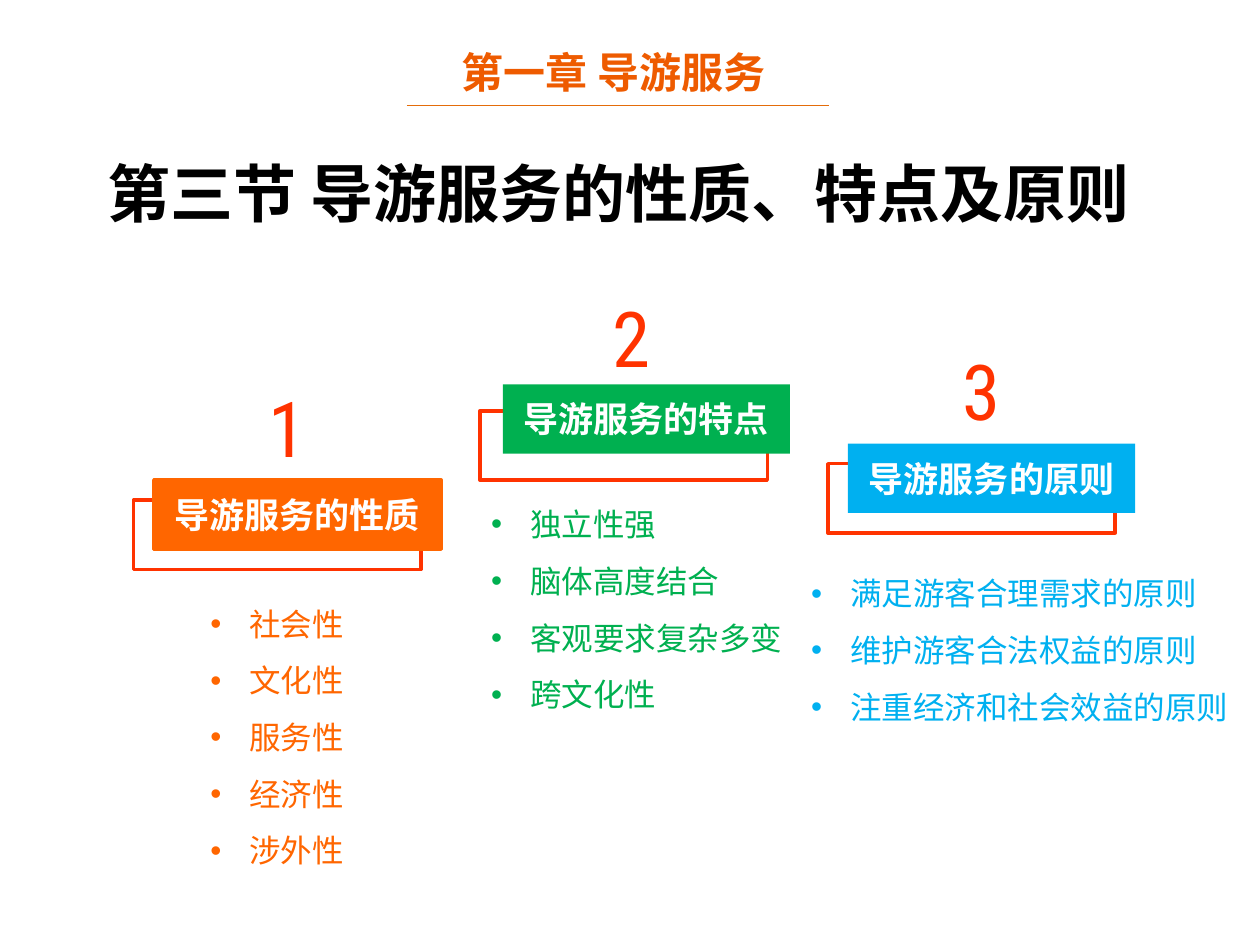
from lxml import etree
from pptx import Presentation
from pptx.dml.color import RGBColor
from pptx.enum.shapes import MSO_CONNECTOR, MSO_SHAPE
from pptx.enum.text import MSO_ANCHOR, MSO_AUTO_SIZE, PP_ALIGN
from pptx.oxml.ns import qn
from pptx.util import Inches, Pt

COLORS = {
    "rule": "E46C0A", "chapter": "EE5B00", "title": "000000", "accent": "FF3300",
    "white": "FFFFFF", "orange": "FF6600", "green": "00B050", "blue": "00B0F0",
}
BODY, CJK, DIGITS = "Calibri", "Noto Sans CJK SC", "Roboto Condensed"
LABEL_SIZE = (2.28, 0.55)
INDENT = 0.31

CHAPTER = "第一章 导游服务"
TITLE = "第三节 导游服务的性质、特点及原则"
TOPICS = [
    {"number": "1", "number_at": (2.03, 2.97), "label": "导游服务的性质", "color": "orange",
     "label_at": (1.22, 3.81), "frame_at": (1.06, 3.97), "outlined": True,
     "list_at": (1.06, 4.6, 2.28, 2.37), "align": PP_ALIGN.CENTER,
     "items": ["社会性", "文化性", "服务性", "经济性", "涉外性"]},
    {"number": "2", "number_at": (4.76, 2.26), "label": "导游服务的特点", "color": "green",
     "label_at": (3.99, 3.05), "frame_at": (3.81, 3.26), "outlined": False,
     "list_at": (3.8, 3.81, 2.77, 1.92), "align": PP_ALIGN.LEFT,
     "items": ["独立性强", "脑体高度结合", "客观要求复杂多变", "跨文化性"]},
    {"number": "3", "number_at": (7.54, 2.68), "label": "导游服务的原则", "color": "blue",
     "label_at": (6.73, 3.52), "frame_at": (6.57, 3.68), "outlined": False,
     "list_at": (6.34, 4.36, 3.66, 1.92), "align": PP_ALIGN.LEFT,
     "items": ["满足游客合理需求的原则", "维护游客合法权益的原则", "注重经济和社会效益的原则"]},
]


def color(name):
    return RGBColor.from_string(COLORS[name])


def inches(values):
    return [Inches(value) for value in values]


def write(para, text, size, color_name, font=BODY, bold=False, align=PP_ALIGN.LEFT):
    para.alignment = align
    span = para.add_run()
    span.text = text
    span.font.size = Pt(size)
    span.font.bold = bold
    span.font.name = font
    span.font.color.rgb = color(color_name)
    etree.SubElement(span.font._element, qn("a:ea"), typeface=CJK)


def add_text_box(page, place):
    box = page.shapes.add_textbox(*inches(place))
    box.text_frame.word_wrap = True
    return box.text_frame


def add_rectangle(page, place, fill=None, line=None):
    box = page.shapes.add_shape(MSO_SHAPE.RECTANGLE, *inches(place + LABEL_SIZE))
    box.shadow.inherit = False
    if fill:
        box.fill.solid()
        box.fill.fore_color.rgb = color(fill)
    else:
        box.fill.background()
    if line:
        box.line.color.rgb = color(line)
        box.line.width = Pt(2)
    else:
        box.line.fill.background()
    return box


def add_bullet(para):
    properties = para._p.get_or_add_pPr()
    properties.set("marL", str(Inches(INDENT)))
    properties.set("indent", str(-Inches(INDENT)))
    etree.SubElement(properties, qn("a:buFont"), typeface="Arial")
    etree.SubElement(properties, qn("a:buChar"), char="•")


def add_heading(page):
    rule = page.shapes.add_connector(MSO_CONNECTOR.STRAIGHT, *inches((3.23, 0.84, 6.58, 0.84)))
    rule.line.color.rgb = color("rule")
    rule.line.width = Pt(0.75)
    etree.SubElement(rule._element.spPr, qn("a:effectLst"))

    chapter = add_text_box(page, (3.1, 0.32, 3.54, 0.5))
    write(chapter.paragraphs[0], CHAPTER, 24, "chapter", bold=True, align=PP_ALIGN.CENTER)

    title = page.shapes.title
    title.left, title.top, title.width, title.height = inches((0.75, 1.18, 8.74, 0.71))
    frame = title.text_frame
    frame.auto_size = MSO_AUTO_SIZE.NONE
    frame.vertical_anchor = MSO_ANCHOR.TOP
    write(frame.paragraphs[0], TITLE, 36, "title", font=CJK, bold=True)


def add_topic(page, topic):
    name = topic["color"]
    add_rectangle(page, topic["frame_at"], line="accent")
    label = add_rectangle(page, topic["label_at"], fill=name,
                          line=name if topic["outlined"] else None)
    label.text_frame.vertical_anchor = MSO_ANCHOR.MIDDLE
    write(label.text_frame.paragraphs[0], topic["label"], 20, "white",
          bold=True, align=PP_ALIGN.CENTER)

    number = add_text_box(page, topic["number_at"] + (0.67, 0.84))
    write(number.paragraphs[0], topic["number"], 44, "accent", font=DIGITS)

    frame = add_text_box(page, topic["list_at"])
    for index, item in enumerate(topic["items"]):
        para = frame.add_paragraph() if index else frame.paragraphs[0]
        add_bullet(para)
        para.line_spacing = 1.5
        write(para, item, 18, name, align=topic["align"])


def main():
    deck = Presentation()
    deck.slide_width, deck.slide_height = Inches(10), Inches(7.5)
    page = deck.slides.add_slide(deck.slide_layouts[5])
    add_heading(page)
    for topic in TOPICS:
        add_topic(page, topic)
    deck.save("out.pptx")


if __name__ == "__main__":
    main()
